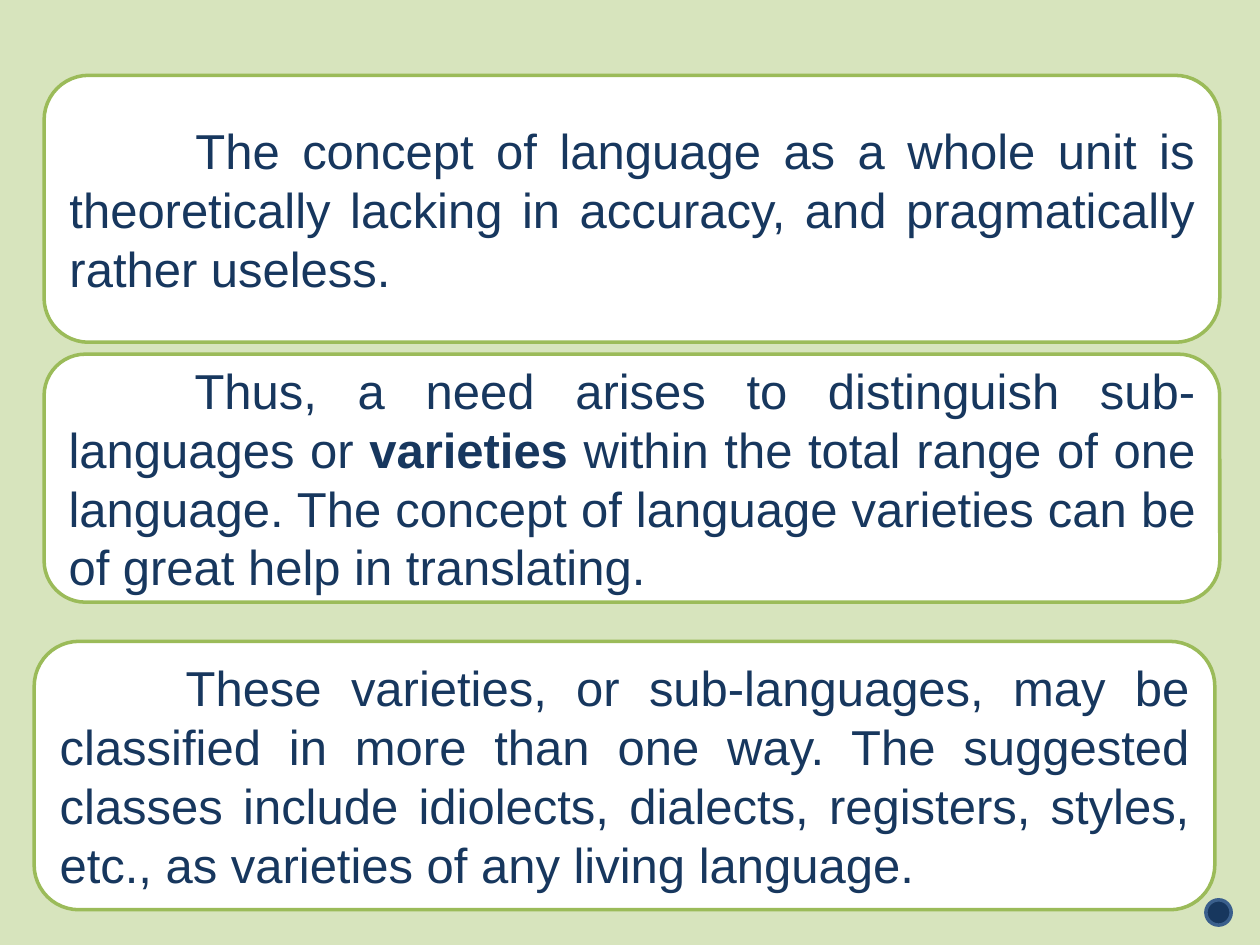
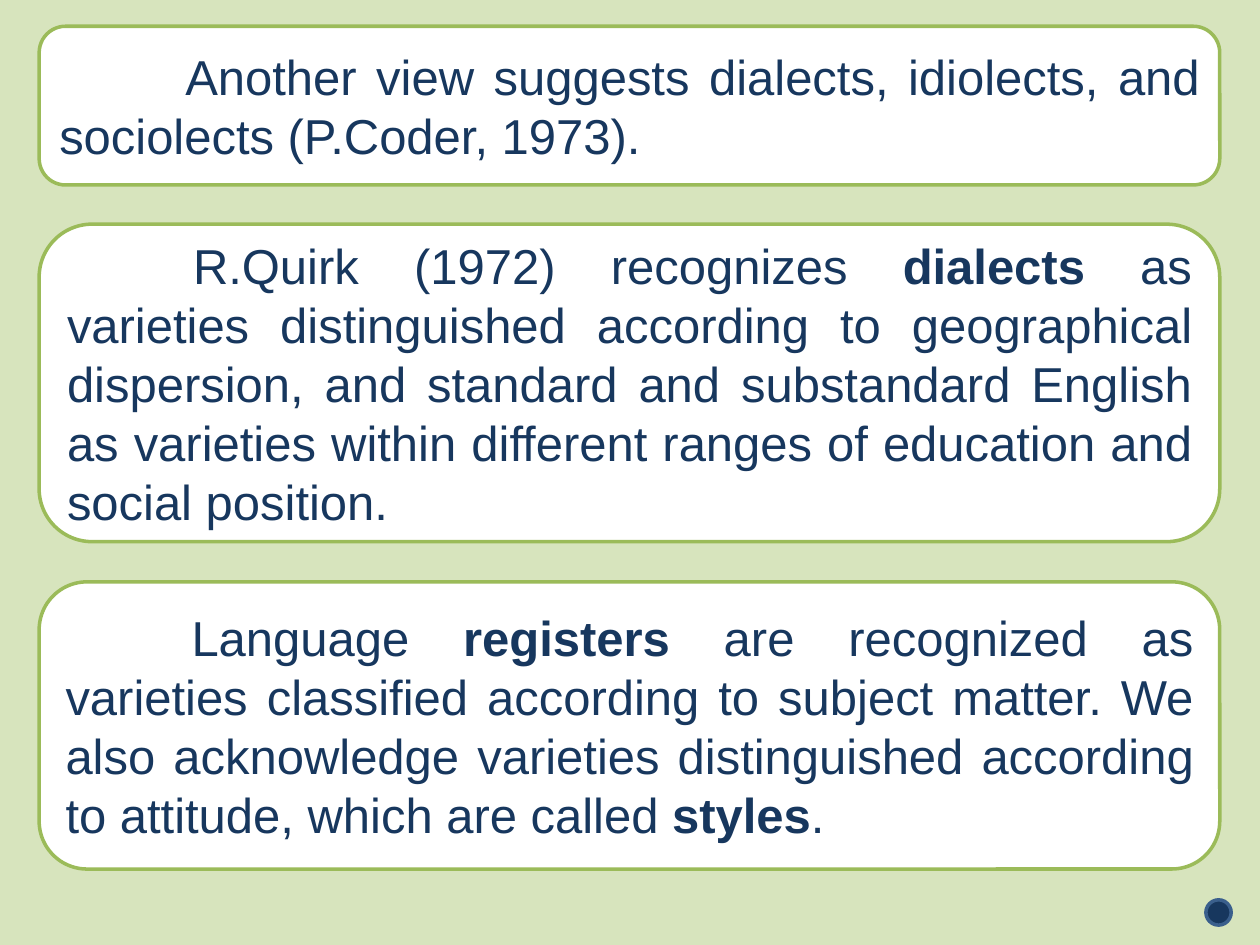
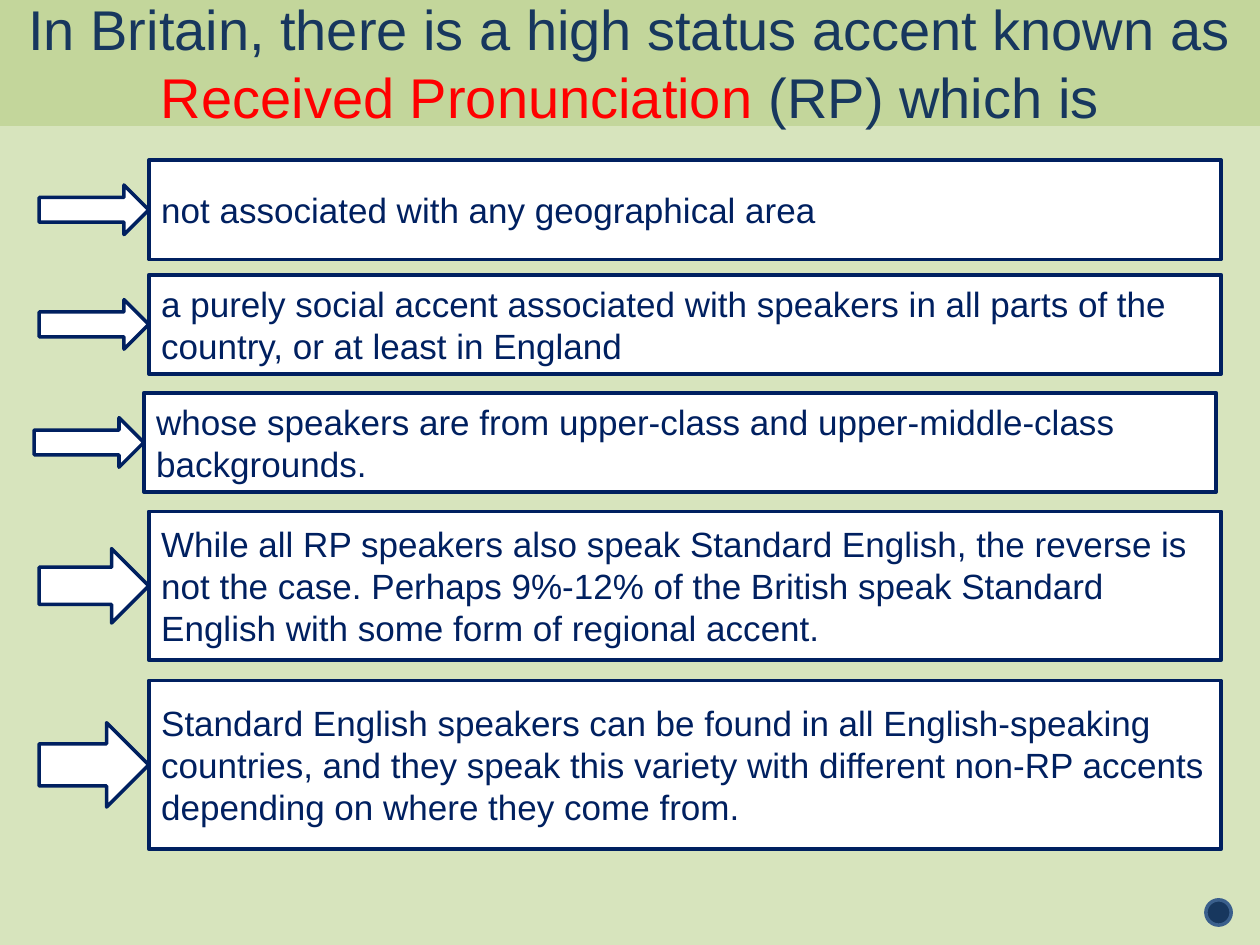
from pptx import Presentation
from pptx.dml.color import RGBColor
from pptx.enum.shapes import MSO_SHAPE
from pptx.enum.text import MSO_ANCHOR, PP_ALIGN
from pptx.util import Cm, Pt

PALE = RGBColor(0xD7, 0xE4, 0xBD)
BAND = RGBColor(0xC3, 0xD6, 0x9B)
GREEN = RGBColor(0x9B, 0xBB, 0x59)
WHITE = RGBColor(0xFF, 0xFF, 0xFF)
INK = RGBColor(0x17, 0x37, 0x5E)
NAVY = RGBColor(0x00, 0x20, 0x60)
STEEL = RGBColor(0x3A, 0x5F, 0x8C)
RED = RGBColor(0xFF, 0x00, 0x00)

WIDTH, HEIGHT = 25.4, 19.05
INDENT = 2.54   # first line of a card
ARROW = 2.21    # width of a row's arrow

# Text formats: "color" goes to the font colour, the rest to the font
CARD = {"name": "Arial", "size": Pt(28), "color": INK}
HEAD = {"name": "Arial", "size": Pt(32), "color": INK}
ITEM = {"name": "Arial", "size": Pt(20), "color": NAVY}

# Cards: box in cm, then text with *marked* words in bold
VIEWS = [
    ((0.89, 1.52, 23.7, 5.38),
     "The concept of language as a whole unit is theoretically lacking in "
     "accuracy, and pragmatically rather useless."),
    ((0.89, 7.14, 23.7, 5),
     "Thus, a need arises to distinguish sub-languages or *varieties* within "
     "the total range of one language. The concept of language varieties can "
     "be of great help in translating."),
    ((0.69, 12.93, 23.8, 5.41),
     "These varieties, or sub-languages, may be classified in more than one "
     "way. The suggested classes include idiolects, dialects, registers, "
     "styles, etc., as varieties of any living language."),
]
KINDS = [
    ((0.79, 0.53, 23.8, 3.2),
     "Another view suggests dialects, idiolects, and sociolects "
     "(P.Coder, 1973)."),
    ((0.79, 4.52, 23.8, 6.4),
     "R.Quirk (1972) recognizes *dialects* as varieties distinguished "
     "according to geographical dispersion, and standard and substandard "
     "English as varieties within different ranges of education and social "
     "position."),
    ((0.79, 11.73, 23.8, 5.79),
     "Language *registers* are recognized as varieties classified according "
     "to subject matter. We also acknowledge varieties distinguished "
     "according to attitude, which are called *styles*."),
]
TITLE = ("In Britain, there is a high status accent known as "
         "*Received Pronunciation *(RP) which is")
TRAITS = [
    ((0.79, 3.23, 23.83, 2), "not associated with any geographical area"),
    ((0.79, 5.54, 23.83, 2),
     "a purely social accent associated with speakers in all parts of the "
     "country, or at least in England"),
    ((0.69, 7.92, 23.83, 2),
     "whose speakers are from upper-class and upper-middle-class "
     "backgrounds."),
    ((0.79, 10.31, 23.83, 3),
     "While all RP speakers also speak Standard English, the reverse is not "
     "the case. Perhaps 9%-12% of the British speak Standard English with "
     "some form of regional accent."),
    ((0.79, 13.72, 23.83, 3.4),
     "Standard English speakers can be found in all English-speaking "
     "countries, and they speak this variety with different non-RP accents "
     "depending on where they come from."),
]


def draw(parent, kind, box, fill, line):
    """Add a filled and outlined shape; box is in cm."""
    shape = parent.shapes.add_shape(kind, *map(Cm, box))
    shape.shadow.inherit = False
    shape.fill.solid()
    shape.fill.fore_color.rgb = fill
    shape.line.color.rgb = line
    shape.line.width = Pt(2)
    return shape


def write(shape, text, style, align, mark=None):
    """Fill a shape with text; words between stars also take mark."""
    frame = shape.text_frame
    frame.word_wrap = True
    frame.vertical_anchor = MSO_ANCHOR.MIDDLE
    para = frame.paragraphs[0]
    para.alignment = align
    for index, part in enumerate(text.split("*")):
        run = para.add_run()
        run.text = part
        look = {**style, **mark} if mark and index % 2 else style
        for key, value in look.items():
            if key == "color":
                run.font.color.rgb = value
            else:
                setattr(run.font, key, value)
    return para


def add_page(deck):
    """Add a blank slide with the corner dot."""
    page = deck.slides.add_slide(deck.slide_layouts[6])
    draw(page, MSO_SHAPE.OVAL, (24.31, 18.14, 0.51, 0.51), INK, STEEL)
    return page


def add_card(page, box, text):
    """Rounded card with an indented, justified paragraph."""
    card = draw(page, MSO_SHAPE.ROUNDED_RECTANGLE, box, WHITE, GREEN)
    para = write(card, text, CARD, PP_ALIGN.JUSTIFY, {"bold": True})
    para._p.get_or_add_pPr().set("indent", str(Cm(INDENT)))


def add_band(page, box, text):
    """Title band."""
    band = draw(page, MSO_SHAPE.RECTANGLE, box, BAND, BAND)
    write(band, text, HEAD, PP_ALIGN.CENTER, {"color": RED})


def add_row(page, box, text):
    """Text box with an arrow of half its height pointing at it."""
    left, top, width, height = box
    row = page.shapes.add_group_shape()
    panel = (left + ARROW, top, width - ARROW, height)
    field = draw(row, MSO_SHAPE.RECTANGLE, panel, WHITE, NAVY)
    write(field, text, ITEM, PP_ALIGN.LEFT)
    tip = (left, top + height / 4, ARROW, height / 2)
    draw(row, MSO_SHAPE.RIGHT_ARROW, tip, WHITE, NAVY)


def main():
    deck = Presentation()
    deck.slide_width, deck.slide_height = Cm(WIDTH), Cm(HEIGHT)
    ground = deck.slide_master.background.fill
    ground.solid()
    ground.fore_color.rgb = PALE

    # Card slides
    for cards in (VIEWS, KINDS):
        page = add_page(deck)
        for box, text in cards:
            add_card(page, box, text)

    # Accent slide
    page = add_page(deck)
    add_band(page, (0, 0, WIDTH, 2.51), TITLE)
    for box, text in TRAITS:
        add_row(page, box, text)

    deck.save("out.pptx")


if __name__ == "__main__":
    main()
